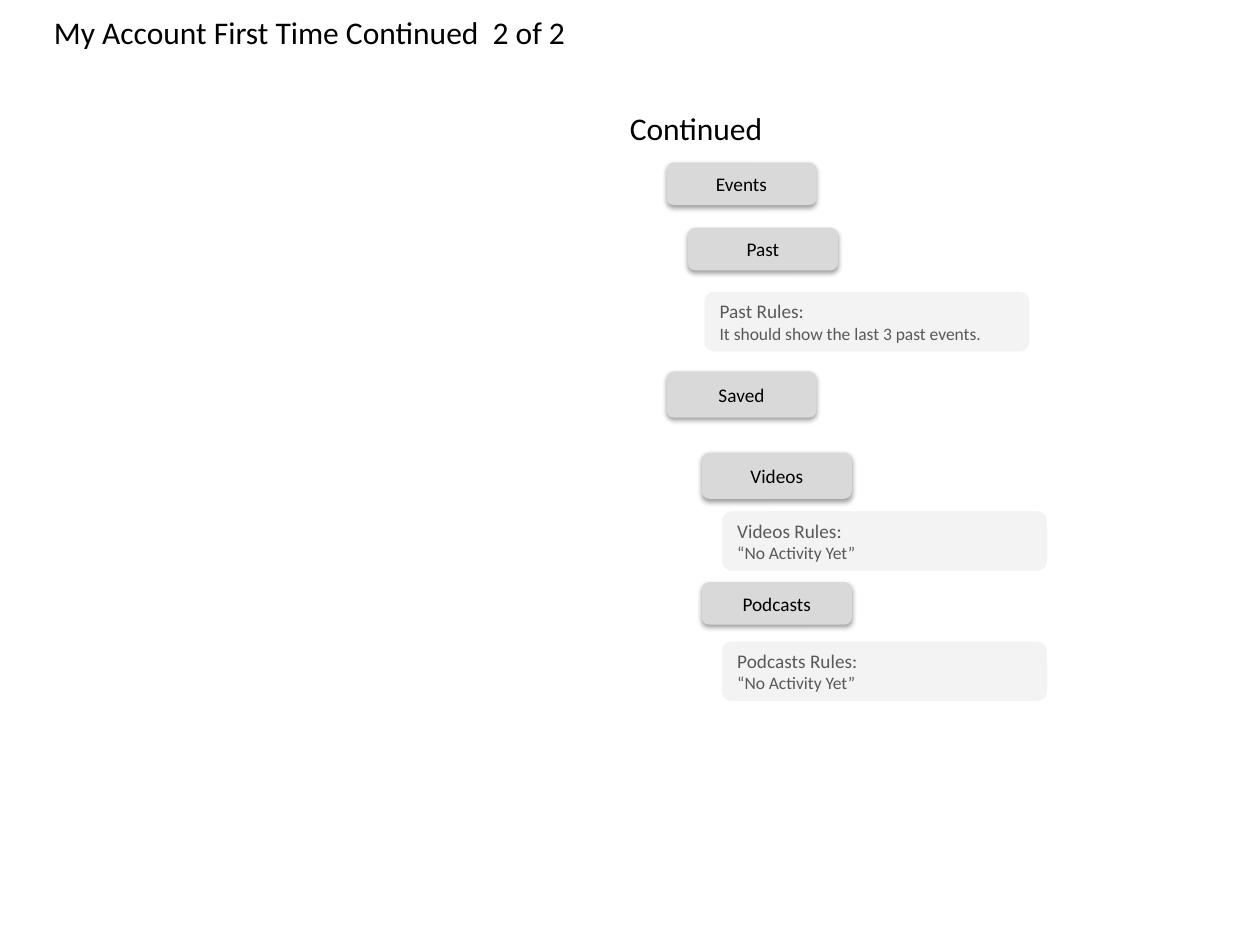
"""Builds the second account flow slide: headings, menu buttons and rule notes."""
from lxml import etree
from pptx import Presentation
from pptx.dml.color import RGBColor
from pptx.enum.shapes import MSO_SHAPE
from pptx.enum.text import MSO_ANCHOR, PP_ALIGN
from pptx.oxml.ns import qn
from pptx.util import Inches, Pt

ROUNDED = MSO_SHAPE.ROUNDED_RECTANGLE
MIDDLE, TOP = MSO_ANCHOR.MIDDLE, MSO_ANCHOR.TOP
LEFT, CENTER = PP_ALIGN.LEFT, PP_ALIGN.CENTER

THEME = {
    "font": "Calibri",
    "ink": RGBColor(0x00, 0x00, 0x00),
    "muted": RGBColor(0x59, 0x59, 0x59),
    "button": RGBColor(0xD9, 0xD9, 0xD9),
    "note": RGBColor(0xF3, 0xF3, 0xF3),
    "heading_size": 18,
    "label_size": 11,
    "detail_size": 10,
}

presentation = Presentation()
presentation.slide_width, presentation.slide_height = Inches(10), Inches(7.5)
slide = presentation.slides.add_slide(presentation.slide_layouts[6])
COLUMN = presentation.slide_width / 100
ROW = presentation.slide_height / 100


def place(left, top, width, height):
    return [round(length) for length in (left * COLUMN, top * ROW, width * COLUMN, height * ROW)]


def write(shape, lines, sizes, color, alignment, anchor):
    text_frame = shape.text_frame
    text_frame.text = "\n".join(lines)
    text_frame.vertical_anchor = anchor
    for paragraph, size in zip(text_frame.paragraphs, sizes):
        paragraph.alignment = alignment
        font = paragraph.runs[0].font
        font.name, font.size, font.color.rgb = THEME["font"], Pt(size), color


headings = [
    ("My Account First Time Continued  2 of 2", 3.3, 0.4, 44.4, 6, MIDDLE, True),
    ("Continued", 49, 10.9, 12.7, 5.4, TOP, False),
]
for heading, left, top, width, height, anchor, wrap in headings:
    box = slide.shapes.add_textbox(*place(left, top, width, height))
    write(box, [heading], [THEME["heading_size"]], THEME["ink"], LEFT, anchor)
    box.text_frame.word_wrap = wrap

buttons = [
    ("Events", 52.9, 17.2, 4.5),
    ("Past", 54.6, 24.1, 4.5),
    ("Saved", 52.9, 39.3, 4.9),
    ("Videos", 55.7, 47.9, 4.9),
    ("Podcasts", 55.7, 61.6, 4.5),
]
for label, left, top, height in buttons:
    button = slide.shapes.add_shape(ROUNDED, *place(left, top, 11.9, height))
    button.fill.solid()
    button.fill.fore_color.rgb = THEME["button"]
    button.line.fill.background()
    button.shadow.inherit = False
    effects = button.element.spPr.find(qn("a:effectLst"))
    shadow = etree.SubElement(effects, qn("a:outerShdw"), blurRad=str(Pt(3.1)), dist=str(Pt(1.6)),
                              dir="5400000", rotWithShape="0")
    shadow_color = etree.SubElement(shadow, qn("a:srgbClr"), val=str(THEME["ink"]))
    etree.SubElement(shadow_color, qn("a:alpha"), val="38000")
    write(button, [label], [THEME["label_size"]], THEME["ink"], CENTER, MIDDLE)

notes = [
    ("Past Rules:", "It should show the last 3 past events.", 55.9, 30.9),
    ("Videos Rules:", "“No Activity Yet”", 57.3, 54.1),
    ("Podcasts Rules:", "“No Activity Yet”", 57.3, 67.9),
]
for title, detail, left, top in notes:
    note = slide.shapes.add_shape(ROUNDED, *place(left, top, 25.8, 6.3))
    note.fill.solid()
    note.fill.fore_color.rgb = THEME["note"]
    note.line.fill.background()
    note.shadow.inherit = False
    sizes = [THEME["label_size"], THEME["detail_size"]]
    write(note, [title, detail], sizes, THEME["muted"], LEFT, MIDDLE)

presentation.save("out.pptx")
